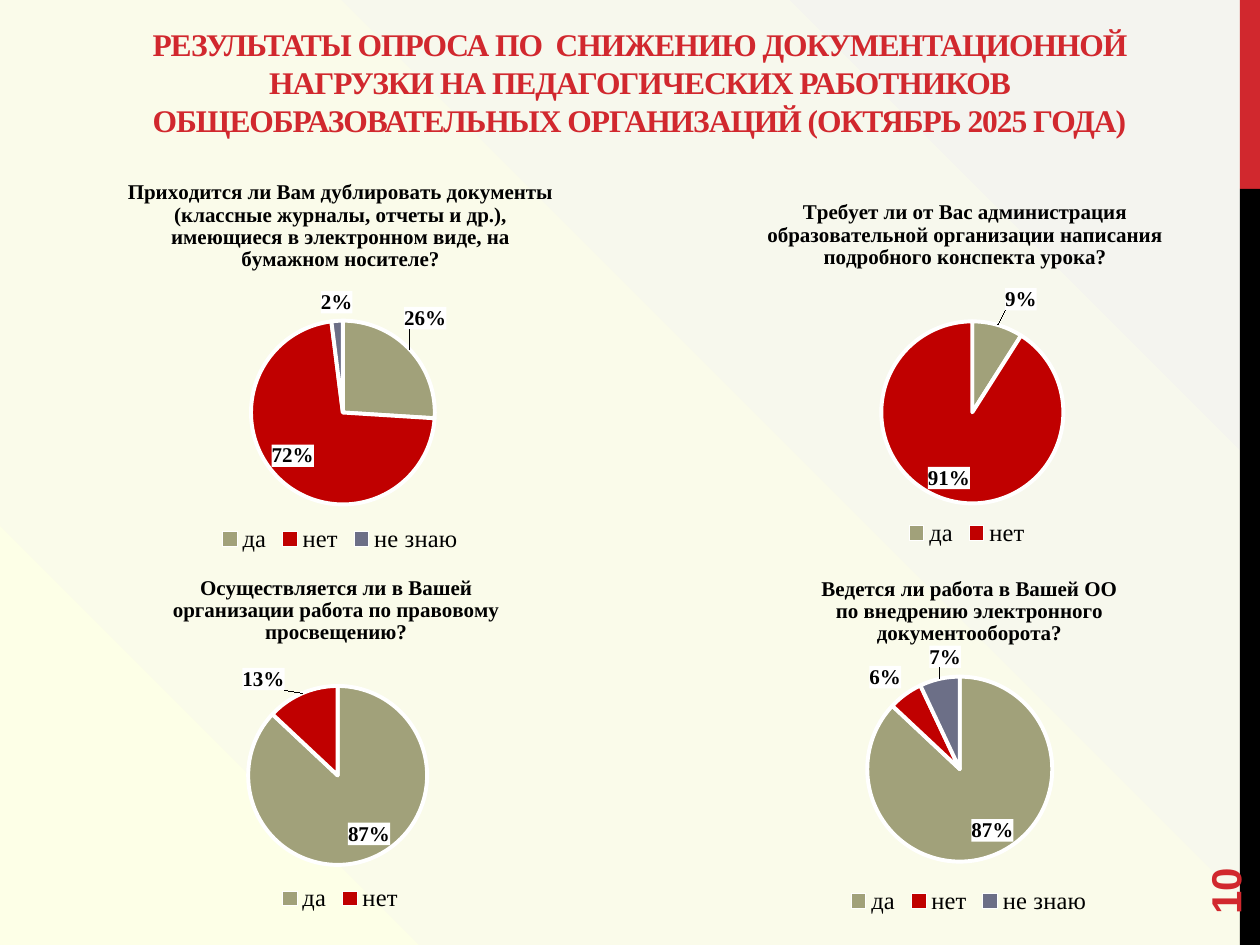
from dataclasses import dataclass

from lxml import etree
from pptx import Presentation
from pptx.chart.data import CategoryChartData
from pptx.dml.color import RGBColor
from pptx.enum import chart as charts, shapes, text
from pptx.oxml import parse_xml
from pptx.oxml.ns import nsdecls, qn
from pptx.util import Inches, Pt


@dataclass(frozen=True)
class Theme:
    red: str = "D1282E"
    black: str = "000000"
    white: str = "FFFFFF"
    slices: tuple = ("A1A17A", "C00000", "6C6F87")
    background: tuple = ((0, "FDFFE7"), (38, "FAFBEA"), (99, "F4F4EF"))
    serif: str = "Times New Roman"
    sans: str = "Arial"
    heading: int = 18
    number: int = 24
    legend: int = 14
    label: int = 12


@dataclass(frozen=True)
class Poll:
    """One question; title, plot and label offset are fractions of the chart."""
    question: str
    box: tuple
    shares: tuple
    title_at: tuple
    plot: tuple
    moved_slice: int
    offset: tuple


THEME = Theme()
ANSWERS = ("да", "нет", "не знаю")
POLLS = (
    Poll("Приходится ли Вам дублировать документы (классные журналы, отчеты и др.), "
         "имеющиеся в электронном виде, на бумажном носителе?",
         (0.5, 1.39, 4.4, 3.04), (0.26, 0.72, 0.02),
         (0.11, 0), (0.07, 0.38, 0.87, 0.48), 0, (-0.02, -0.04)),
    Poll("Требует ли от Вас администрация образовательной организации написания "
         "подробного конспекта урока?",
         (5.55, 1.43, 4.25, 2.95), (0.09, 0.91),
         (0.12, 0.04), (0.09, 0.38, 0.84, 0.49), 0, (0.01, -0.02)),
    Poll("Осуществляется ли в Вашей организации работа по правовому просвещению?",
         (0.76, 4.32, 3.88, 2.96), (0.87, 0.13),
         (0.15, 0.07), (0.06, 0.38, 0.87, 0.48), 1, (-0.03, 0.01)),
    Poll("Ведется ли работа в Вашей ОО\nпо внедрению электронного документооборота?",
         (5.87, 4.42, 3.64, 2.88), (0.87, 0.06, 0.07),
         (0.17, 0.04), (0.04, 0.33, 0.88, 0.51), 2, (0.05, -0.01)),
)


def color(value: str) -> RGBColor:
    return RGBColor.from_string(value)


def style(font, size: int, name: str, value: str, bold: bool = True) -> None:
    font.size, font.name, font.bold = Pt(size), name, bold
    font.color.rgb = color(value)


def paint_background(page) -> None:
    """Circular gradient spreading from the lower left corner."""
    stops = "".join(f'<a:gs pos="{at * 1000}"><a:srgbClr val="{value}"/></a:gs>'
                    for at, value in THEME.background)
    page.background.fill.solid()
    properties = page.background._cSld.bg.bgPr
    gradient = parse_xml(
        f'<a:gradFill {nsdecls("a")} rotWithShape="1"><a:gsLst>{stops}</a:gsLst>'
        '<a:path path="circle"><a:fillToRect t="100000" r="100000"/></a:path></a:gradFill>')
    properties.replace(properties.find(qn("a:solidFill")), gradient)


def add_bar(page, top: float, height: float, value: str) -> None:
    bar = page.shapes.add_shape(shapes.MSO_SHAPE.RECTANGLE, Inches(9.84), Inches(top),
                                Inches(0.16), Inches(height))
    bar.shadow.inherit = False
    bar.fill.solid()
    bar.fill.fore_color.rgb = color(value)
    bar.line.fill.background()


def add_text(page, wording: str, box: tuple, size: int, name: str, anchor):
    area = page.shapes.add_textbox(*map(Inches, box))
    frame = area.text_frame
    frame.word_wrap = True
    frame.vertical_anchor = anchor
    para = frame.paragraphs[0]
    para.text = wording
    style(para.font, size, name, THEME.red)
    return area, para


def place(parent, index: int, **values) -> None:
    """Give a chart part a manual layout as child number index."""
    old = parent.find(qn("c:layout"))
    if old is not None:
        parent.remove(old)
    parts = "".join(f'<c:{key} val="{value}"/>' for key, value in values.items())
    parent.insert(index, parse_xml(f'<c:layout {nsdecls("c")}><c:manualLayout>{parts}'
                                   '</c:manualLayout></c:layout>'))


def label_fill() -> etree._Element:
    return parse_xml(f'<c:spPr {nsdecls("c", "a")}><a:solidFill>'
                     f'<a:srgbClr val="{THEME.white}"/></a:solidFill></c:spPr>')


def add_labels(series, poll: Poll) -> None:
    labels = series.data_labels
    labels.show_value = True
    labels.number_format, labels.number_format_is_linked = "0%", False
    labels.position = charts.XL_LABEL_POSITION.BEST_FIT
    moved = series.points[poll.moved_slice].data_label
    moved.position = charts.XL_LABEL_POSITION.BEST_FIT
    for target in (labels, moved):
        style(target.font, THEME.label, THEME.serif, THEME.black)

    group = series._element.find(qn("c:dLbls"))
    group.find(qn("c:numFmt")).addnext(label_fill())
    single = group.find(qn("c:dLbl"))
    for old in single.findall(qn("c:spPr")):
        single.remove(old)
    place(single, 1, x=poll.offset[0], y=poll.offset[1])
    single.insert(2, parse_xml(f'<c:numFmt {nsdecls("c")} formatCode="0%" sourceLinked="0"/>'))
    single.insert(3, label_fill())


def add_poll(page, poll: Poll) -> None:
    data = CategoryChartData(number_format="0%")
    data.categories = ANSWERS[:len(poll.shares)]
    data.add_series("Series 1", poll.shares)
    chart = page.shapes.add_chart(charts.XL_CHART_TYPE.PIE, *map(Inches, poll.box), data).chart
    style(chart.font, THEME.label, THEME.serif, THEME.black, False)

    title = chart.chart_title
    title.text_frame.text = poll.question
    for para in title.text_frame.paragraphs:
        style(para.font, THEME.label, THEME.serif, THEME.black)
        for span in para.runs:
            style(span.font, THEME.label, THEME.serif, THEME.black)
    place(title._element, 1, xMode="edge", yMode="edge", x=poll.title_at[0], y=poll.title_at[1])

    chart.has_legend = True
    chart.legend.position = charts.XL_LEGEND_POSITION.BOTTOM
    chart.legend.include_in_layout = False
    style(chart.legend.font, THEME.legend, THEME.serif, THEME.black, False)

    left, top, width, height = poll.plot
    place(chart._chartSpace.chart.plotArea, 0, layoutTarget="inner", xMode="edge",
          yMode="edge", x=left, y=top, w=width, h=height)

    plot = chart.plots[0]
    plot.vary_by_categories = True
    series = plot.series[0]
    for index, value in enumerate(THEME.slices[:len(poll.shares)]):
        piece = series.points[index].format
        piece.fill.solid()
        piece.fill.fore_color.rgb = color(value)
        piece.line.color.rgb = color(THEME.white)
        piece.line.width = Pt(2.25)
    add_labels(series, poll)


def main() -> None:
    deck = Presentation()
    deck.slide_width, deck.slide_height = Inches(10), Inches(7.5)
    page = deck.slides.add_slide(deck.slide_layouts[6])
    paint_background(page)
    add_bar(page, 0, 1.5, THEME.red)
    add_bar(page, 1.5, 6, THEME.black)

    _, heading = add_text(
        page, "РЕЗУЛЬТАТЫ ОПРОСА ПО  СНИЖЕНИЮ ДОКУМЕНТАЦИОННОЙ НАГРУЗКИ НА ПЕДАГОГИЧЕСКИХ "
        "РАБОТНИКОВ ОБЩЕОБРАЗОВАТЕЛЬНЫХ ОРГАНИЗАЦИЙ (ОКТЯБРЬ 2025 ГОДА)",
        (0.5, 0.17, 9.15, 0.98), THEME.heading, THEME.serif, text.MSO_ANCHOR.BOTTOM)
    heading.alignment = text.PP_ALIGN.CENTER
    heading.runs[0].font._element.set("spc", "-60")

    number, _ = add_text(page, "10", (9, 6.44, 1.44, 0.4), THEME.number, THEME.sans,
                         text.MSO_ANCHOR.MIDDLE)
    number.rotation = 270

    for poll in POLLS:
        add_poll(page, poll)
    deck.save("out.pptx")


if __name__ == "__main__":
    main()
